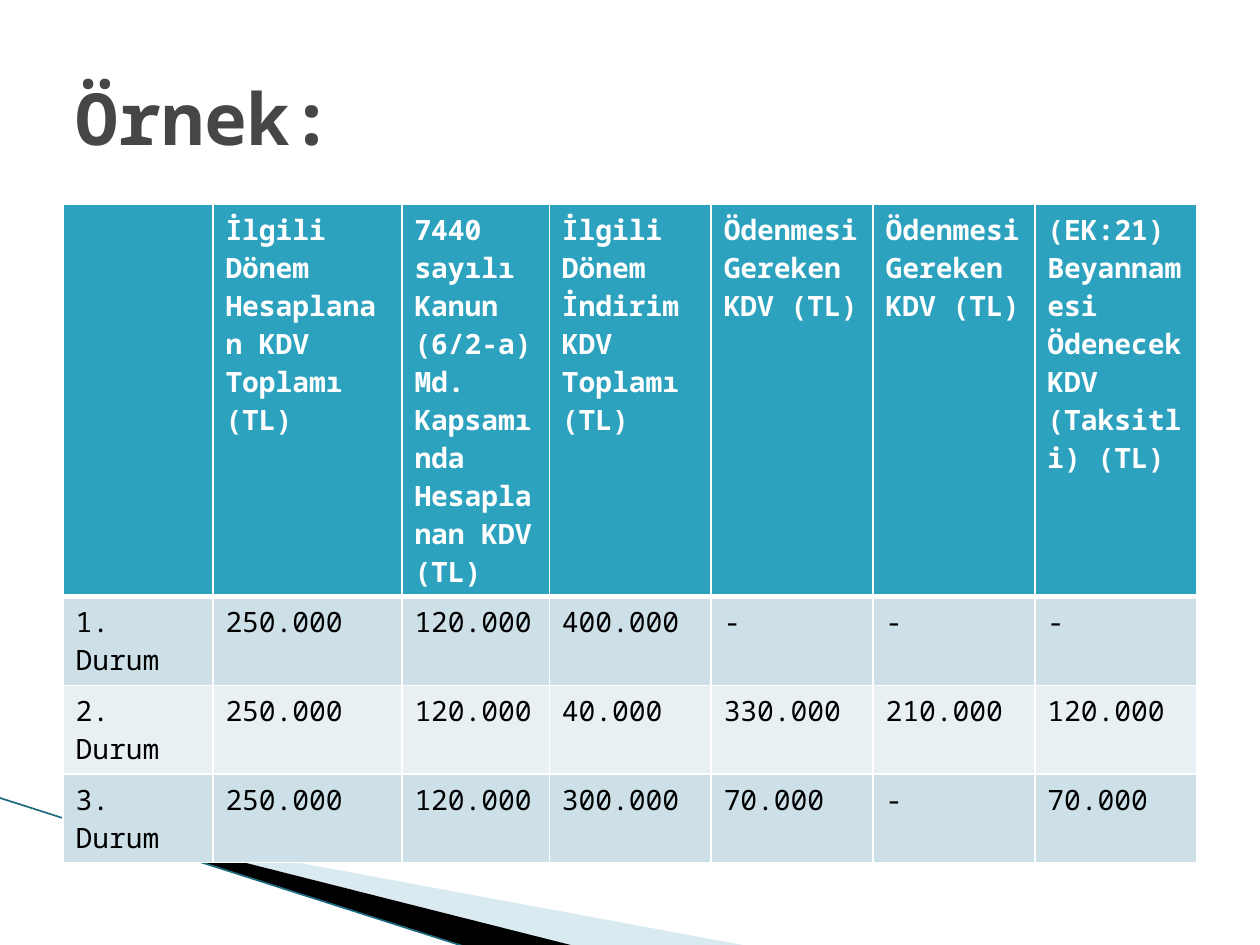
from lxml.etree import SubElement as Sub
from pptx import Presentation
from pptx.dml.color import RGBColor
from pptx.enum.shapes import MSO_CONNECTOR as Link
from pptx.enum.text import MSO_ANCHOR as Anchor, PP_ALIGN as Align
from pptx.oxml.ns import qn
from pptx.util import Inches, Pt

FONT = "Noto Sans Mono"
WIDE = 9
FIRST = [1.19, 1.5, 1.17]
WIDTHS = FIRST + [(WIDE - sum(FIRST)) / 4] * 4
ROW = 0.41
ROWS = [
    ["", "İlgili Dönem Hesaplanan KDV Toplamı (TL)",
     "7440 sayılı Kanun (6/2-a) Md. Kapsamında Hesaplanan KDV (TL)",
     "İlgili Dönem İndirim KDV Toplamı (TL)", "Ödenmesi Gereken KDV (TL)",
     "Ödenmesi Gereken KDV (TL)",
     "(EK:21) Beyannamesi Ödenecek KDV (Taksitli) (TL)"],
    ["1. Durum", "250.000", "120.000", "400.000", "-", "-", "-"],
    ["2. Durum", "250.000", "120.000", "40.000", "330.000", "210.000", "120.000"],
    ["3. Durum", "250.000", "120.000", "300.000", "70.000", "-", "70.000"],
]


def paint(color, value):
    color.rgb = RGBColor.from_string(value)


def place(shape, box):
    shape.left, shape.top, shape.width, shape.height = map(Inches, box)


def write(frame, text, size=16, color="000000", bold=False):
    para = frame.paragraphs[0]
    para.alignment = Align.LEFT
    para.font.size = Pt(size)
    run = para.add_run()
    run.text = text
    font = run.font
    font.name, font.size, font.bold = FONT, Pt(size), bold
    paint(font.color, color)


def reframe(shape, box):
    left, top = shape.left, shape.top
    place(shape, box)
    for trace in shape._element.iter(qn("a:path")):
        trace.set("w", str(shape.width))
        trace.set("h", str(shape.height))
        for point in trace.iter(qn("a:pt")):
            point.set("x", str(int(point.get("x")) + left - shape.left))
            point.set("y", str(int(point.get("y")) + top - shape.top))


def wedge(slide, box, points, color, alpha=None):
    start, *rest = [(Inches(x), Inches(y)) for x, y in points]
    form = slide.shapes.build_freeform(*start)
    form.add_line_segments(rest, close=True)
    shape = form.convert_to_shape()
    reframe(shape, box)
    shape.shadow.inherit = False
    shape.line.fill.background()
    shape.fill.solid()
    paint(shape.fill.fore_color, color)
    if alpha:
        tone = shape.fill._xPr.find(qn("a:solidFill"))[0]
        Sub(tone, qn("a:alpha"), val=str(alpha * 1000))


def edge(slide, start, end, color, width):
    ends = [Inches(n) for n in (*start, *end)]
    line = slide.shapes.add_connector(Link.STRAIGHT, *ends)
    paint(line.line.color, color)
    line.line.width = Pt(width)
    Sub(line._element.spPr, qn("a:effectLst"))


def border(cell, base):
    props = cell._tc.get_or_add_tcPr()
    for side in "LRTB":
        width = base if side == "B" else 1
        line = Sub(props, qn(f"a:ln{side}"), w=str(Pt(width)))
        fill = Sub(line, qn("a:solidFill"))
        Sub(fill, qn("a:srgbClr"), val="FFFFFF")


def grid(slide):
    area = [Inches(n) for n in (0.5, 1.62, WIDE, ROW * len(ROWS))]
    table = slide.shapes.add_table(len(ROWS), len(WIDTHS), *area).table
    for col, width in zip(table.columns, WIDTHS):
        col.width = Inches(width)
    for i, row in enumerate(ROWS):
        table.rows[i].height = Inches(ROW)
        head = i == 0
        back = "2DA2BF" if head else ("E8F0F4", "CDE0E8")[i % 2]
        for j, text in enumerate(row):
            cell = table.cell(i, j)
            border(cell, 3 if head else 1)
            cell.fill.solid()
            paint(cell.fill.fore_color, back)
            if text:
                write(cell.text_frame, text, bold=head,
                      color="FFFFFF" if head else "000000")


def heading(slide, text):
    title = slide.shapes.title
    place(title, (0.5, 0.3, WIDE, 1.25))
    title.text_frame.vertical_anchor = Anchor.MIDDLE
    write(title.text_frame, text, size=41, color="464646", bold=True)


def main():
    deck = Presentation()
    deck.slide_width, deck.slide_height = Inches(10), Inches(7.5)
    slide = deck.slides.add_slide(deck.slide_layouts[5])
    wedge(slide, (0.78, 5.47, 4.16, 1.58),
          [(0.55, 6.51), (5.95, 7.51), (4.56, 7.51), (0.55, 6.5)], "A0CBDC", 40)
    wedge(slide, (-0.06, 6.33, 4.16, 0.92),
          [(0.53, 6.49), (4.57, 7.51), (3.72, 7.52), (0.54, 6.5)], "000000")
    edge(slide, (-0.01, 6.33), (3.71, 7.52), "1A6A80", 0.95)
    grid(slide)
    heading(slide, "Örnek:")
    deck.save("out.pptx")


if __name__ == "__main__":
    main()
